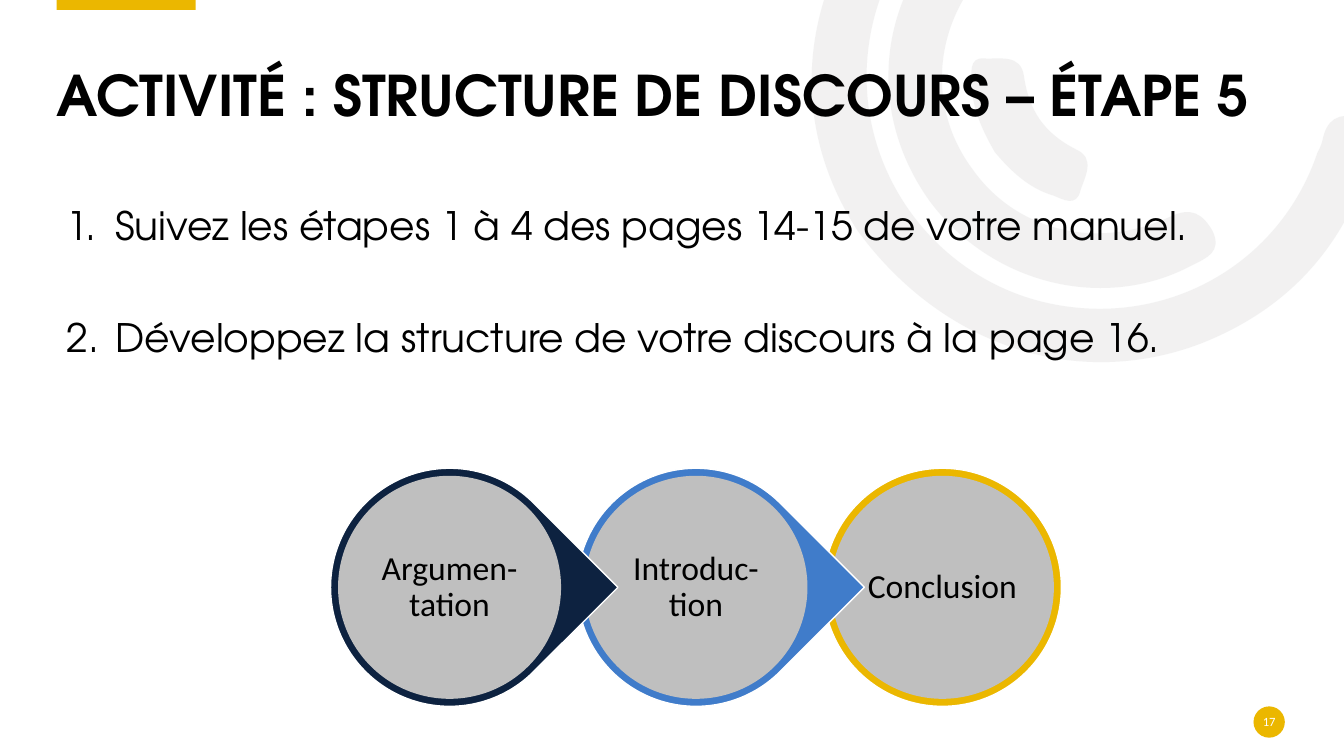
from lxml import etree
from pptx import Presentation
from pptx import util as u
from pptx.dml.color import RGBColor
from pptx.enum import shapes, text
from pptx.oxml.ns import qn

COLOURS = {
    "black": "000000", "white": "FFFFFF", "gold": "EBB700", "blue": "407CCA",
    "navy": "0D2240", "grey": "BFBFBF", "arc": "E7E6E6",
}
HEADING_FONT, LABEL_FONT = "TeX Gyre Adventor", "Calibri"

# Background arcs in hundredths of an inch: a start point, then Bézier curves
# (two controls and an end)
ARCS = [
    [(851, 229),
     (799, 149), (787, 50), (838, -50),
     (890, -152), (976, -203), (1090, -207),
     (1105, -207), (1121, -210), (1131, -195),
     (1144, -175), (1127, -154), (1098, -154),
     (967, -154), (865, -59), (860, 68),
     (856, 181), (936, 281), (1046, 302),
     (1160, 324), (1270, 261), (1307, 152),
     (1309, 148), (1311, 144), (1312, 140),
     (1316, 119), (1327, 111), (1349, 117),
     (1373, 124), (1367, 141), (1361, 156),
     (1334, 245), (1278, 307), (1191, 341),
     (1070, 387), (936, 345), (851, 229)],
    [(922, 199),
     (862, 115), (869, 7), (940, -68),
     (951, -79), (962, -95), (980, -78),
     (995, -64), (997, -50), (979, -32),
     (925, 26), (920, 108), (965, 168),
     (1008, 229), (1088, 249), (1161, 215),
     (1182, 205), (1193, 212), (1203, 229),
     (1213, 250), (1197, 256), (1183, 263),
     (1096, 310), (983, 282), (922, 199)],
    [(987, 151),
     (975, 130), (964, 107), (964, 82),
     (964, 73), (961, 57), (976, 58),
     (992, 59), (1013, 53), (1016, 76),
     (1021, 110), (1036, 132), (1067, 148),
     (1088, 157), (1076, 176), (1072, 189),
     (1068, 206), (1055, 198), (1045, 194),
     (1021, 187), (1003, 170), (987, 151)],
]


class SlideBuilder:
    def __init__(self, page):
        self.page = page

    def paint(self, shape, fill, line=None):
        shape.shadow.inherit = False
        shape.fill.solid()
        shape.fill.fore_color.rgb = RGBColor.from_string(COLOURS[fill])
        if line:
            shape.line.color.rgb = RGBColor.from_string(COLOURS[line])
            shape.line.width = u.Pt(1)
        else:
            shape.line.fill.background()

    def shape(self, kind, left, top, width, height, fill, line=None):
        shape = self.page.shapes.add_shape(
            kind, u.Cm(left), u.Cm(top), u.Cm(width), u.Cm(height))
        self.paint(shape, fill, line)
        return shape

    def arc(self, points, opacity):
        ends = points[::3]
        builder = self.page.shapes.build_freeform(*ends[0], scale=u.Cm(0.0254))
        builder.add_line_segments(ends[1:], close=True)
        arc = builder.convert_to_shape()
        self.paint(arc, "arc")
        colour = arc.fill._xPr.find(".//" + qn("a:srgbClr"))
        etree.SubElement(colour, qn("a:alpha"), val=str(opacity * 1000))
        # Bend each straight segment into its Bézier curve
        left, top = (min(end[axis] for end in ends) for axis in (0, 1))
        segments = list(arc._element.iter(qn("a:lnTo")))
        for i, segment in enumerate(segments):
            curve = etree.Element(qn("a:cubicBezTo"))
            for x, y in points[3 * i + 1:3 * i + 4]:
                etree.SubElement(curve, qn("a:pt"), x=str(x - left), y=str(y - top))
            segment.getparent().replace(segment, curve)

    def frame(self, box, anchor, inset=True):
        frame = box.text_frame
        frame.word_wrap = True
        frame.vertical_anchor = anchor
        if not inset:
            frame.margin_left = frame.margin_right = 0
            frame.margin_top = frame.margin_bottom = 0
        return frame

    def style(self, para, size, font, colour="black", bold=False):
        para.line_spacing = 0.9
        para.font.size, para.font.name, para.font.bold = u.Pt(size), font, bold
        para.font.color.rgb = RGBColor.from_string(COLOURS[colour])

    def label(self, shape, words, size, colour="black"):
        para = self.frame(shape, text.MSO_ANCHOR.MIDDLE, inset=False).paragraphs[0]
        para.text = words
        para.alignment = text.PP_ALIGN.CENTER
        self.style(para, size, LABEL_FONT, colour)

    def title(self, words, left, top, width, height):
        box = self.page.shapes.add_textbox(u.Cm(left), u.Cm(top), u.Cm(width), u.Cm(height))
        para = self.frame(box, text.MSO_ANCHOR.BOTTOM, inset=False).paragraphs[0]
        para.text = words
        self.style(para, 40, HEADING_FONT, bold=True)

    def numbered_list(self, items, left, top, width, height, gap):
        box = self.page.shapes.add_textbox(u.Cm(left), u.Cm(top), u.Cm(width), u.Cm(height))
        frame = self.frame(box, text.MSO_ANCHOR.TOP)
        for i, item in enumerate(items):
            para = frame.add_paragraph() if i else frame.paragraphs[0]
            para.text = item
            if i:
                para.space_before = u.Pt(gap)
            properties = para._p.get_or_add_pPr()
            indent = u.Cm(1.23)
            properties.set("marL", str(indent))
            properties.set("indent", str(-indent))
            etree.SubElement(properties, qn("a:buFont"), typeface="+mj-lt")
            etree.SubElement(properties, qn("a:buAutoNum"), type="arabicPeriod")
            self.style(para, 28, HEADING_FONT)

    def step(self, words, kind, left, top, colour, size=6, ring=0.19):
        outer = self.shape(kind, left, top, size, size, colour, "white")
        if kind == shapes.MSO_SHAPE.TEAR:
            outer.rotation = 45
        disc = size - 2 * ring
        inner = self.shape(shapes.MSO_SHAPE.OVAL, left + ring, top + ring, disc, disc, "grey")
        self.label(inner, words, 24)


def main():
    deck = Presentation()
    deck.slide_width, deck.slide_height = u.Cm(33.87), u.Cm(19.05)
    slide = SlideBuilder(deck.slides.add_slide(deck.slide_layouts[6]))

    # Background and page number
    for points in ARCS:
        slide.arc(points, opacity=53)
    slide.shape(shapes.MSO_SHAPE.RECTANGLE, 1.43, -0.05, 3.5, 0.3, "gold")
    dot = slide.shape(shapes.MSO_SHAPE.OVAL, 31.59, 17.8, 0.79, 0.79, "gold")
    slide.label(dot, "17", 9, "white")

    # Title and instructions
    slide.numbered_list(
        ["Suivez les étapes 1 à 4 des pages 14-15 de votre manuel.",
         "Développez la structure de votre discours à la page 16."],
        1.43, 5.08, 30.1, 6.25, gap=50)
    slide.title("ACTIVITÉ : STRUCTURE DE DISCOURS – ÉTAPE 5", 1.43, 0.68, 30.96, 2.57)

    # Speech steps, from right to left so that each tip overlaps the next disc
    steps = [
        ("Argumen-tation", shapes.MSO_SHAPE.TEAR, "navy"),
        ("Introduc-tion", shapes.MSO_SHAPE.TEAR, "blue"),
        ("Conclusion", shapes.MSO_SHAPE.OVAL, "gold"),
    ]
    for i, (words, kind, colour) in reversed(list(enumerate(steps))):
        slide.step(words, kind, 8.33 + i * 6.21, 11.8, colour)

    deck.save("out.pptx")


if __name__ == "__main__":
    main()
